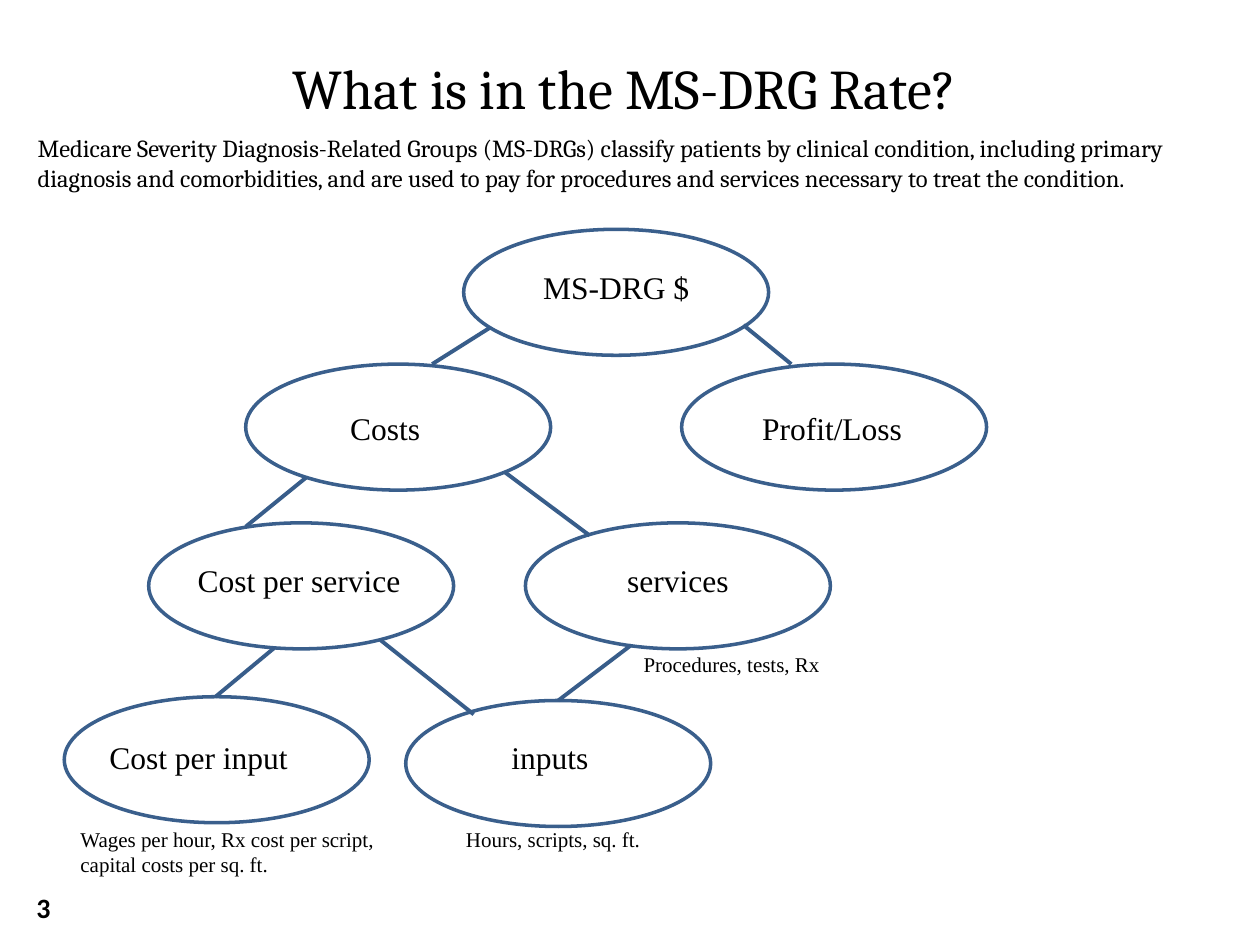
import pptx
import pptx.dml.color
import pptx.enum.shapes
import pptx.enum.text
import pptx.util
from lxml import etree

Inches = pptx.util.Inches
Pt = pptx.util.Pt
ALIGN = pptx.enum.text.PP_ALIGN
ANCHOR = pptx.enum.text.MSO_ANCHOR
SERIF = "Times New Roman"
NODE_WIDTH, NODE_HEIGHT = 2.42, 1

NODES = [
    (0.51, 5.53), (3.22, 5.56),
    (4.17, 4.15), (1.18, 4.15),
    (5.41, 2.89), (1.95, 2.89),
    (3.68, 1.82),
]
NODE_LABELS = [
    ("Cost per service", 1.47, 4.4, 1.83),
    ("Costs", 2.68, 3.2, 1.08),
    ("Profit/Loss", 5.95, 3.2, 1.39),
    ("services", 4.88, 4.4, 1.67),
    ("inputs", 3.96, 5.81, 1.08),
    ("Cost per input", 0.77, 5.81, 1.67),
]
EXAMPLES = [
    ("Procedures, tests, Rx", 5.01, 5.12, 1.76, 0.3),
    ("Hours, scripts, sq. ft.", 3.6, 6.51, 1.94, 0.3),
    ("Wages per hour, Rx cost per script, capital costs per sq. ft.",
     0.54, 6.51, 2.82, 0.5),
]
BRANCHES = [
    (3.89, 2.6, 3.43, 2.89),
    (2.43, 3.79, 1.95, 4.18),
    (5.01, 5.12, 4.43, 5.56),
    (5.9, 2.58, 6.28, 2.89),
    (4.01, 3.75, 4.68, 4.25),
    (2.18, 5.14, 1.71, 5.53),
    (3.02, 5.08, 3.76, 5.67),
]
DESCRIPTION = (
    "Medicare Severity Diagnosis-Related Groups (MS-DRGs) classify patients "
    "by clinical condition, including primary diagnosis and comorbidities, "
    "and are used to pay for procedures and services necessary to treat the "
    "condition."
)


def color(value):
    return pptx.dml.color.RGBColor.from_string(value)


def add_node(s, x, y):
    sp = s.shapes.add_shape(
        pptx.enum.shapes.MSO_SHAPE.OVAL,
        Inches(x), Inches(y), Inches(NODE_WIDTH), Inches(NODE_HEIGHT))
    sp.shadow.inherit = False
    sp.fill.solid()
    sp.fill.fore_color.rgb = color("FFFFFF")
    sp.line.color.rgb = color("3A5F8C")
    sp.line.width = Pt(2)


def add_text(s, text, x, y, w, h, size, font=SERIF, align=ALIGN.LEFT,
             anchor=ANCHOR.TOP, bold=False):
    sp = s.shapes.add_textbox(Inches(x), Inches(y), Inches(w), Inches(h))
    tf = sp.text_frame
    tf.word_wrap = True
    tf.vertical_anchor = anchor
    p = tf.paragraphs[0]
    p.text = text
    p.alignment = align
    r = p.runs[0]
    r.font.name = font
    r.font.size = Pt(size)
    r.font.bold = bold
    r.font.color.rgb = color("000000")


def add_branch(s, x1, y1, x2, y2):
    line = s.shapes.add_connector(
        pptx.enum.shapes.MSO_CONNECTOR.STRAIGHT,
        Inches(x1), Inches(y1), Inches(x2), Inches(y2))
    line.line.color.rgb = color("385D8A")
    line.line.width = Pt(2.25)
    etree.SubElement(line._element.spPr, pptx.oxml.ns.qn("a:effectLst"))


def main():
    prs = pptx.Presentation()
    prs.slide_width, prs.slide_height = Inches(10), Inches(7.5)
    s = prs.slides.add_slide(prs.slide_layouts[6])

    for node in NODES:
        add_node(s, *node)
    add_text(s, "What is in the MS-DRG Rate? ", 0.01, 0.22, 9.99, 0.94, 32,
             "Cambria", ALIGN.CENTER, ANCHOR.MIDDLE)
    add_text(s, "3", 0.01, 7, 0.67, 0.4, 16, "Calibri",
             ALIGN.CENTER, ANCHOR.MIDDLE, True)
    add_text(s, "MS-DRG $", 4.1, 2.08, 1.58, 0.4, 18, align=ALIGN.CENTER)
    for text, x, y, w in NODE_LABELS:
        add_text(s, text, x, y, w, 0.4, 18)
    for example in EXAMPLES:
        add_text(s, *example, 12)
    for branch in BRANCHES:
        add_branch(s, *branch)
    add_text(s, DESCRIPTION, 0.2, 1.01, 9.55, 0.57, 14, "Cambria")

    prs.save("out.pptx")


if __name__ == "__main__":
    main()
